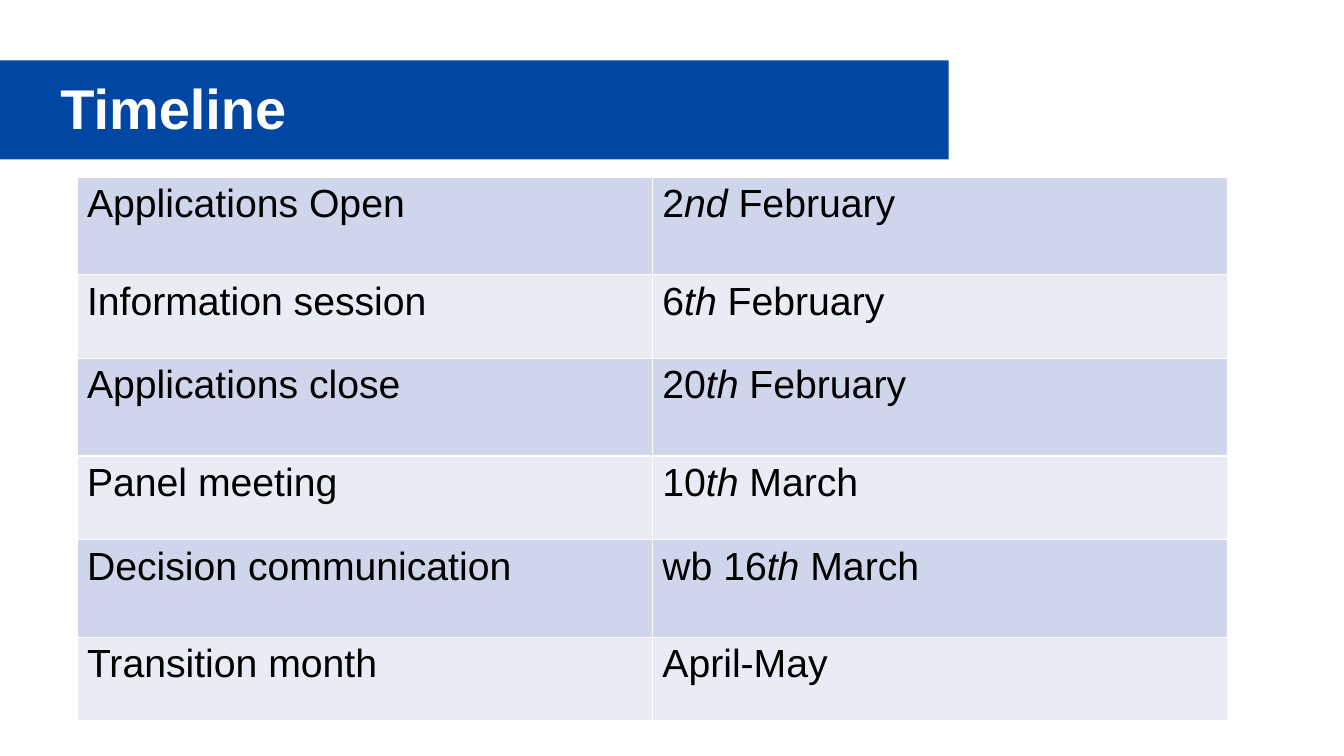
import pptx
import pptx.util
import pptx.dml.color
import pptx.enum.shapes
import pptx.enum.text
import pptx.oxml
import pptx.oxml.ns

Cm = pptx.util.Cm
Pt = pptx.util.Pt
RGBColor = pptx.dml.color.RGBColor

BLUE = RGBColor(0x00, 0x47, 0xA3)
WHITE = RGBColor(0xFF, 0xFF, 0xFF)
BLACK = RGBColor(0x00, 0x00, 0x00)
BANDS = [RGBColor(0xCF, 0xD5, 0xEA), RGBColor(0xE9, 0xEB, 0xF5)]
BAND_HEIGHTS = [Cm(2.46), Cm(2.11)]

TITLE_FORMAT = {"name": "Arial", "size": Pt(40), "bold": True}
ENTRY_FORMAT = {"name": "Arial", "size": Pt(28), "bold": False}

STAGES = [
    (["Applications Open"], ["2", "nd", " February"]),
    (["Information session"], ["6", "th", " February"]),
    (["Applications close"], ["20", "th", " February"]),
    (["Panel meeting"], ["10", "th", " March"]),
    (["Decision communication"], ["wb 16", "th", " March"]),
    (["Transition month"], ["April-May"]),
]


def format_font(font, values, color):
    for attribute, value in values.items():
        setattr(font, attribute, value)
    font.color.rgb = color


def add_borders(cell):
    properties = cell._tc.get_or_add_tcPr()
    for position, side in enumerate(("lnL", "lnR", "lnT", "lnB")):
        border = pptx.oxml.parse_xml(
            f'<a:{side} {pptx.oxml.ns.nsdecls("a")} w="12700"><a:solidFill>'
            f'<a:srgbClr val="{WHITE}"/></a:solidFill></a:{side}>'
        )
        properties.insert(position, border)


presentation = pptx.Presentation()
presentation.slide_width = Cm(33.87)
presentation.slide_height = Cm(19.05)
slide = presentation.slides.add_slide(presentation.slide_layouts[5])

banner = slide.shapes.add_shape(
    pptx.enum.shapes.MSO_SHAPE.RECTANGLE, Cm(-0.05), Cm(1.52), Cm(23.96), Cm(2.5)
)
banner.shadow.inherit = False
banner.fill.solid()
banner.fill.fore_color.rgb = BLUE
banner.line.fill.background()
slide.shapes._spTree.insert(2, banner._element)

heading = slide.shapes.title
heading.left, heading.top = Cm(1.27), Cm(1.93)
heading.width, heading.height = Cm(22.17), Cm(1.75)
heading.text_frame.text = "Timeline"
heading.text_frame.auto_size = pptx.enum.text.MSO_AUTO_SIZE.NONE
heading.text_frame.vertical_anchor = pptx.enum.text.MSO_ANCHOR.MIDDLE
heading_line = heading.text_frame.paragraphs[0]
heading_line.alignment = pptx.enum.text.PP_ALIGN.LEFT
heading_line.line_spacing = 0.9
format_font(heading_line.runs[0].font, TITLE_FORMAT, WHITE)

timeline = slide.shapes.add_table(
    len(STAGES), 2, Cm(1.94), Cm(4.46), Cm(29), Cm(13.71)
).table
timeline.first_row = False

for row, stage in enumerate(STAGES):
    timeline.rows[row].height = BAND_HEIGHTS[row % 2]
    for column, pieces in enumerate(stage):
        cell = timeline.cell(row, column)
        cell.fill.solid()
        cell.fill.fore_color.rgb = BANDS[row % 2]
        add_borders(cell)
        entry = cell.text_frame.paragraphs[0]
        for piece in pieces:
            run = entry.add_run()
            run.text = piece
            format_font(run.font, ENTRY_FORMAT, BLACK)
            run.font.italic = piece in ("nd", "th")

presentation.save("out.pptx")
